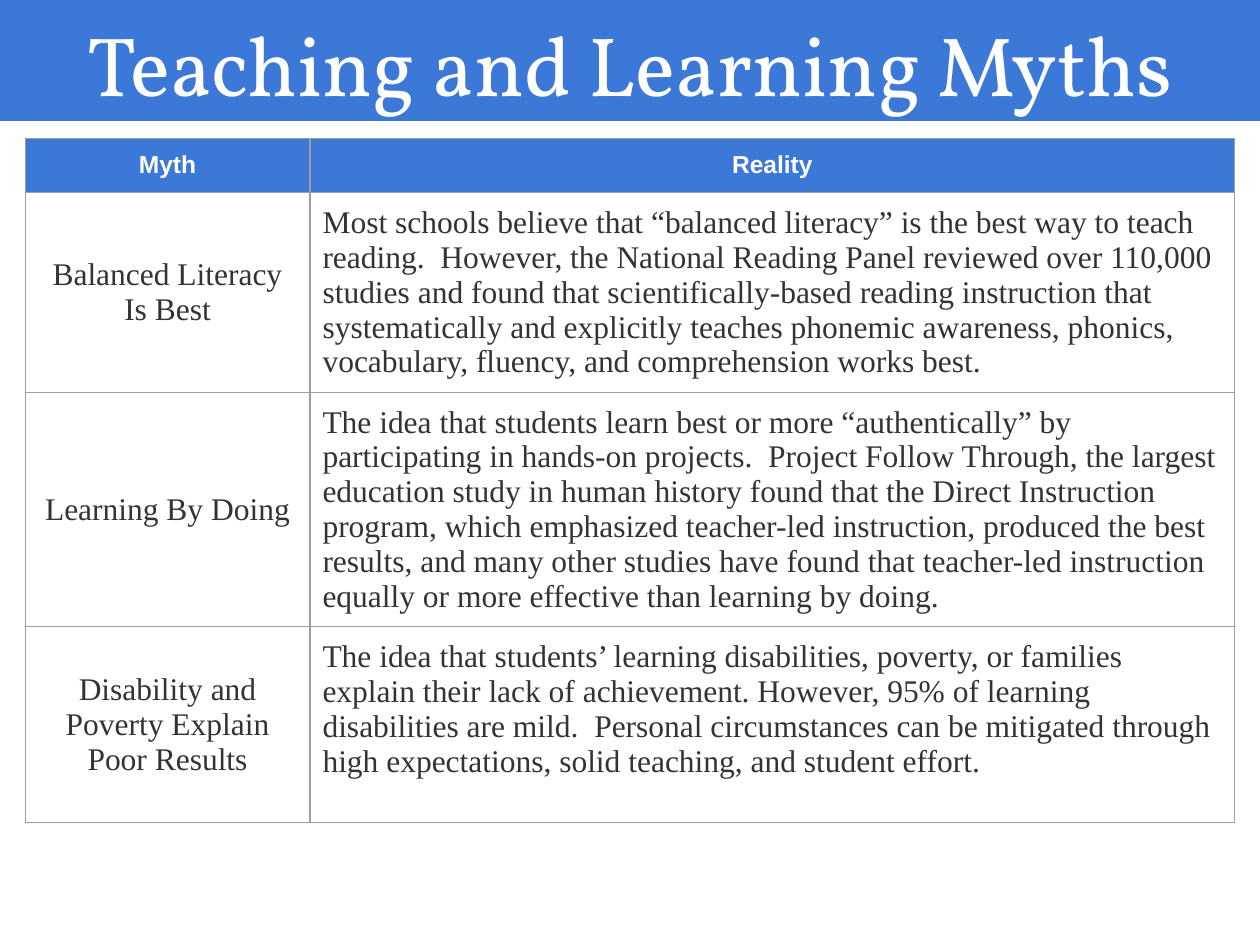
from lxml.etree import SubElement
from pptx import Presentation
from pptx.dml.color import RGBColor
from pptx.enum.text import MSO_ANCHOR, MSO_AUTO_SIZE, PP_ALIGN
from pptx.oxml.ns import qn
from pptx.util import Inches, Pt

COLORS = {"blue": "3C78D8", "white": "FFFFFF", "text": "333333", "border": "9E9E9E"}
INSET = Inches(0.1)
COLUMN_WIDTHS = [2.26, 7.34]
ROW_HEIGHTS = [0.43, 1.25, 1.25, 1.55]
HEADERS = ["Myth", "Reality"]
MYTHS = [
    ("Balanced Literacy Is Best",
     "Most schools believe that “balanced literacy” is the best way to teach reading.  "
     "However, the National Reading Panel reviewed over 110,000 studies and found that "
     "scientifically-based reading instruction that systematically and explicitly teaches "
     "phonemic awareness, phonics, vocabulary, fluency, and comprehension works best."),
    ("Learning By Doing",
     "The idea that students learn best or more “authentically” by participating in "
     "hands-on projects.  Project Follow Through, the largest education study in human "
     "history found that the Direct Instruction program, which emphasized teacher-led "
     "instruction, produced the best results, and many other studies have found that "
     "teacher-led instruction equally or more effective than learning by doing."),
    ("Disability and Poverty Explain Poor Results",
     "The idea that students’ learning disabilities, poverty, or families explain their "
     "lack of achievement. However, 95% of learning disabilities are mild.  Personal "
     "circumstances can be mitigated through high expectations, solid teaching, and "
     "student effort."),
]


def rgb(name):
    return RGBColor.from_string(COLORS[name])


def format_paragraph(p, font, size, color, align, bold=False):
    p.alignment = align
    p.font.name = font
    p.font.size = Pt(size)
    p.font.bold = bold
    p.font.color.rgb = rgb(color)


def set_insets(box):
    box.margin_left = box.margin_right = INSET
    box.margin_top = box.margin_bottom = INSET


def add_title(s, text):
    sp = s.shapes.title
    sp.left, sp.top = Inches(0), Inches(0)
    sp.width, sp.height = Inches(10), Inches(0.96)
    sp.fill.solid()
    sp.fill.fore_color.rgb = rgb("blue")
    tf = sp.text_frame
    tf.text = text
    tf.word_wrap = True
    tf.auto_size = MSO_AUTO_SIZE.NONE
    tf.vertical_anchor = MSO_ANCHOR.TOP
    set_insets(tf)
    format_paragraph(tf.paragraphs[0], "Vollkorn", 48, "white", PP_ALIGN.CENTER)


def set_borders(cell):
    tcPr = cell._tc.get_or_add_tcPr()
    for i, side in enumerate(("a:lnL", "a:lnR", "a:lnT", "a:lnB")):
        ln = SubElement(tcPr, qn(side), w=str(Pt(0.75)))
        fill = SubElement(ln, qn("a:solidFill"))
        SubElement(fill, qn("a:srgbClr"), val=COLORS["border"])
        tcPr.insert(i, ln)


def fill_header_cell(cell, text):
    cell.text = text
    cell.fill.solid()
    cell.fill.fore_color.rgb = rgb("blue")
    format_paragraph(cell.text_frame.paragraphs[0], "Arial", 14, "white",
                     PP_ALIGN.CENTER, bold=True)


def fill_body_cell(cell, text, is_myth):
    cell.text = text
    cell.fill.background()
    p = cell.text_frame.paragraphs[0]
    align = PP_ALIGN.CENTER if is_myth else PP_ALIGN.LEFT
    format_paragraph(p, "Times New Roman", 18, "text", align)
    if is_myth:
        cell.vertical_anchor = MSO_ANCHOR.MIDDLE
    else:
        p.space_before = Pt(10.5)


def add_myth_table(s):
    table = s.shapes.add_table(
        len(ROW_HEIGHTS), len(COLUMN_WIDTHS), Inches(0.2), Inches(1.1),
        Inches(sum(COLUMN_WIDTHS)), Inches(sum(ROW_HEIGHTS))).table
    table.horz_banding = False
    for column, width in zip(table.columns, COLUMN_WIDTHS):
        column.width = Inches(width)
    for row, height in zip(table.rows, ROW_HEIGHTS):
        row.height = Inches(height)
    for i, texts in enumerate([HEADERS, *MYTHS]):
        for j, text in enumerate(texts):
            cell = table.cell(i, j)
            set_insets(cell)
            if i == 0:
                fill_header_cell(cell, text)
            else:
                fill_body_cell(cell, text, is_myth=j == 0)
            set_borders(cell)


def main():
    prs = Presentation()
    prs.slide_width, prs.slide_height = Inches(10), Inches(7.5)
    s = prs.slides.add_slide(prs.slide_layouts[5])
    add_title(s, "Teaching and Learning Myths")
    add_myth_table(s)
    prs.save("out.pptx")


if __name__ == "__main__":
    main()
